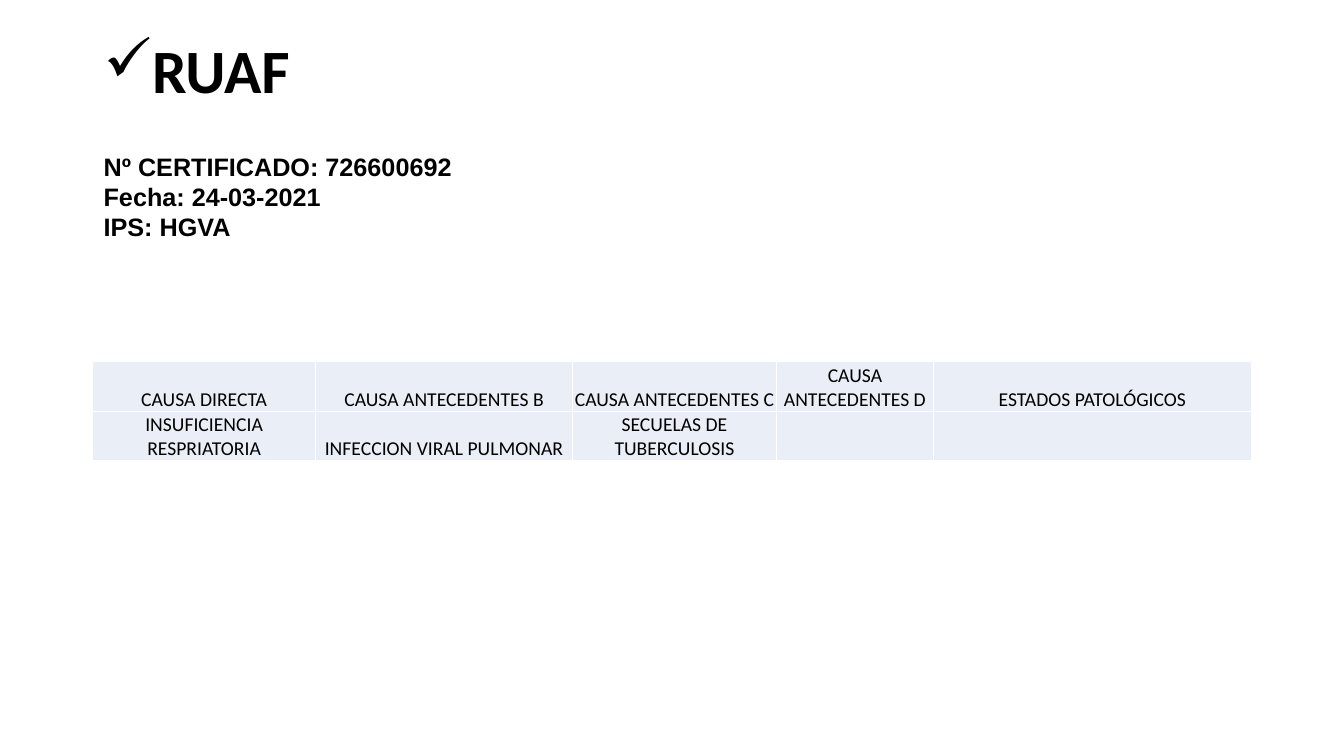
"""Build the RUAF death certificate slide."""
from dataclasses import dataclass

from lxml import etree
from pptx import Presentation
from pptx import util as u
from pptx.dml.color import RGBColor
from pptx.enum import text
from pptx.oxml import ns

BLACK = RGBColor(0x00, 0x00, 0x00)
WHITE = RGBColor(0xFF, 0xFF, 0xFF)
PALE_BLUE = RGBColor(0xEA, 0xEF, 0xF7)

COLUMN_WIDTHS = (2.21, 2.55, 2.02, 1.56, 3.15)
ROW_HEIGHT = 0.49
CAUSES = (
    ("CAUSA DIRECTA", "CAUSA ANTECEDENTES B", "CAUSA ANTECEDENTES C",
     "CAUSA ANTECEDENTES D", "ESTADOS PATOLÓGICOS"),
    ("INSUFICIENCIA RESPRIATORIA", "INFECCION VIRAL PULMONAR",
     "SECUELAS DE TUBERCULOSIS", "", ""),
)
CELL_FORMAT = {
    "vertical_anchor": text.MSO_ANCHOR.BOTTOM,
    "margin_left": u.Inches(0.01),
    "margin_right": u.Inches(0.01),
    "margin_top": u.Inches(0.01),
    "margin_bottom": u.Inches(0),
}
TABLE_FLAGS = {"first_row": False, "horz_banding": False}


@dataclass(frozen=True)
class TextBlock:
    box: tuple[float, float, float, float]
    lines: tuple[str, ...]
    font: dict
    frame: dict
    paragraph: dict
    bullet: str = ""


BLOCKS = (
    TextBlock((0.93, 0, 11.5, 1.45), ("RUAF",),
              {"name": "Calibri", "size": u.Pt(44), "bold": True},
              {"vertical_anchor": text.MSO_ANCHOR.MIDDLE},
              {"line_spacing": 0.9}, "✓"),
    TextBlock((0.93, 1.45, 9.5, 1.01),
              ("Nº CERTIFICADO: 726600692", "Fecha: 24-03-2021", "IPS: HGVA"),
              {"name": "Arial", "size": u.Pt(18), "bold": True},
              {"auto_size": text.MSO_AUTO_SIZE.SHAPE_TO_FIT_TEXT}, {}),
)
CELL_FONT = {"name": "Calibri", "size": u.Pt(14), "bold": False}


def apply(target, values: dict) -> None:
    """Set each named attribute on the target."""
    for name, value in values.items():
        setattr(target, name, value)


def add_run(p, content: str, font: dict) -> None:
    """Add a black run with the given font."""
    r = p.add_run()
    r.text = content
    apply(r.font, font)
    r.font.color.rgb = BLACK


def add_bullet(p, char: str) -> None:
    """Give the paragraph a hanging bullet."""
    pPr = p._p.get_or_add_pPr()
    indent = u.Inches(0.31)
    pPr.set("marL", str(indent))
    pPr.set("indent", str(-indent))
    etree.SubElement(pPr, ns.qn("a:buChar"), char=char)


def add_block(s, block: TextBlock) -> None:
    """Draw a text box with one paragraph per line."""
    sp = s.shapes.add_textbox(*map(u.Inches, block.box))
    tf = sp.text_frame
    apply(tf, {"word_wrap": True, **block.frame})
    for i, line in enumerate(block.lines):
        p = tf.add_paragraph() if i else tf.paragraphs[0]
        apply(p, block.paragraph)
        if block.bullet:
            add_bullet(p, block.bullet)
        add_run(p, line, block.font)


def add_borders(cell) -> None:
    """Draw thin white lines on all four cell sides."""
    tcPr = cell._tc.get_or_add_tcPr()
    for side in "LRTB":
        ln = etree.SubElement(tcPr, ns.qn(f"a:ln{side}"), w=str(u.Pt(1)))
        fill = etree.SubElement(ln, ns.qn("a:solidFill"))
        etree.SubElement(fill, ns.qn("a:srgbClr"), val=str(WHITE))


def add_causes(s) -> None:
    """Draw the table of causes of death."""
    sp = s.shapes.add_table(
        len(CAUSES), len(COLUMN_WIDTHS), u.Inches(0.92), u.Inches(3.59),
        u.Inches(sum(COLUMN_WIDTHS)), u.Inches(ROW_HEIGHT * len(CAUSES)))
    table = sp.table
    apply(table, TABLE_FLAGS)
    for column, width in zip(table.columns, COLUMN_WIDTHS):
        column.width = u.Inches(width)
    for row, contents in zip(table.rows, CAUSES):
        row.height = u.Inches(ROW_HEIGHT)
        for cell, content in zip(row.cells, contents):
            apply(cell, CELL_FORMAT)
            add_borders(cell)
            cell.fill.solid()
            cell.fill.fore_color.rgb = PALE_BLUE
            p = cell.text_frame.paragraphs[0]
            p.alignment = text.PP_ALIGN.CENTER
            if content:
                add_run(p, content, CELL_FONT)


def main() -> None:
    """Create and save the presentation."""
    prs = Presentation()
    apply(prs, {"slide_width": u.Inches(13.33), "slide_height": u.Inches(7.5)})
    s = prs.slides.add_slide(prs.slide_layouts[6])
    for block in BLOCKS:
        add_block(s, block)
    add_causes(s)
    prs.save("out.pptx")


if __name__ == "__main__":
    main()
